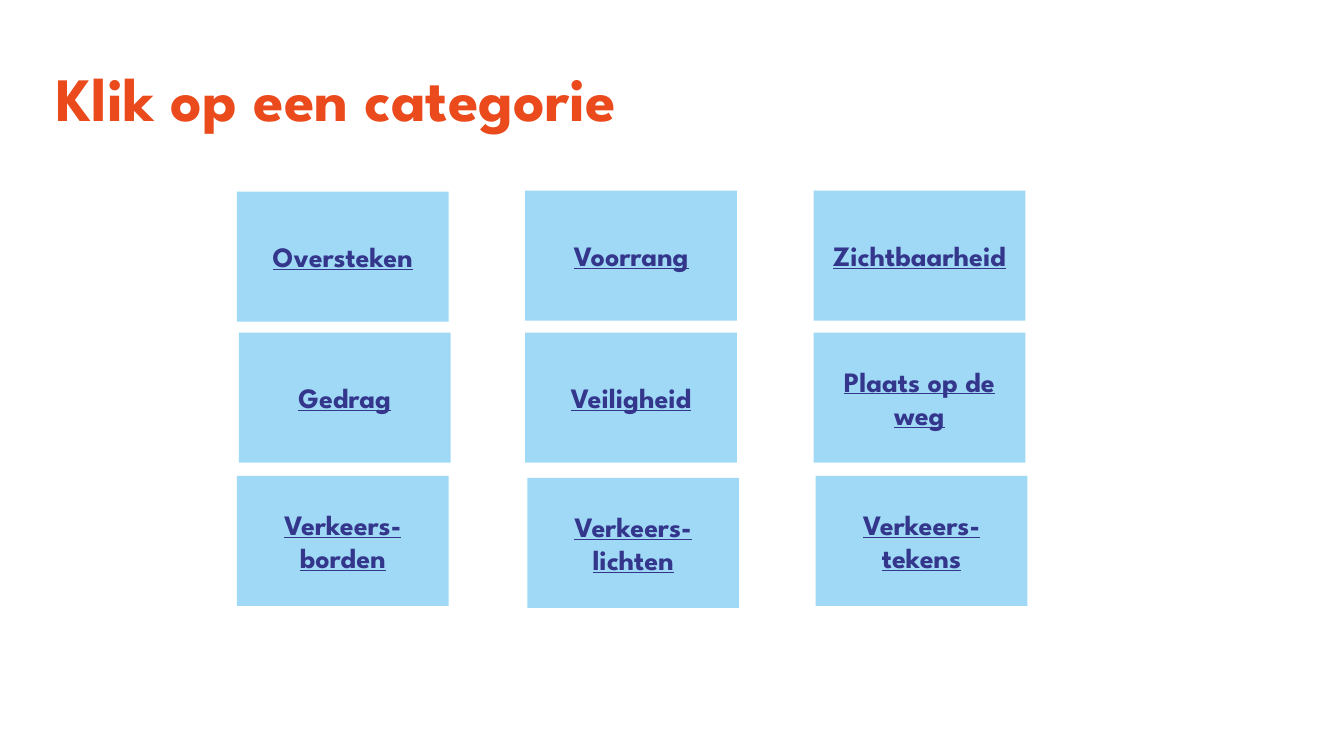
from dataclasses import dataclass

from pptx import Presentation
from pptx.dml.color import RGBColor
from pptx.enum.shapes import MSO_SHAPE as Shape
from pptx.enum.text import MSO_ANCHOR as Anchor, PP_ALIGN as Align
from pptx.util import Inches, Pt


@dataclass(frozen=True)
class Theme:
    font: str = "League Spartan"
    background: str = "FFFFFF"
    title_color: str = "EA4A1C"
    tile_fill: str = "9FD9F6"
    tile_text: str = "33368B"
    title_size: int = 44
    tile_size: int = 20


class CategorySlide:
    """Holds the theme and the current slide."""

    def __init__(self, slide, theme):
        self.slide = slide
        self.theme = theme
        fill = slide.background.fill
        fill.solid()
        fill.fore_color.rgb = RGBColor.from_string(theme.background)

    def set_text(self, shape, text, size, color, align, underline=False):
        frame = shape.text_frame
        frame.text = text
        frame.word_wrap = True
        frame.vertical_anchor = Anchor.MIDDLE
        paragraph = frame.paragraphs[0]
        paragraph.alignment = align
        font = paragraph.runs[0].font
        font.name = self.theme.font
        font.size = Pt(size)
        font.bold = True
        font.underline = underline
        font.color.rgb = RGBColor.from_string(color)
        return paragraph

    def title(self, text, left, top, width, height):
        box = self.slide.shapes.add_textbox(
            Inches(left), Inches(top), Inches(width), Inches(height))
        paragraph = self.set_text(box, text, self.theme.title_size,
                                  self.theme.title_color, Align.LEFT)
        paragraph.line_spacing = 0.9

    def tile(self, text, left, top, width, height):
        shape = self.slide.shapes.add_shape(
            Shape.RECTANGLE,
            Inches(left), Inches(top), Inches(width), Inches(height))
        shape.shadow.inherit = False
        shape.fill.solid()
        shape.fill.fore_color.rgb = RGBColor.from_string(self.theme.tile_fill)
        shape.line.fill.background()
        self.set_text(shape, text, self.theme.tile_size, self.theme.tile_text,
                      Align.CENTER, underline=True)


# Grid of categories: label, shift right, shift down
COLUMN_LEFT, COLUMN_STEP = 2.35, 2.86
ROW_TOPS = (1.89, 3.3, 4.72)
TILE_WIDTH, TILE_HEIGHT = 2.1, 1.29
CATEGORIES = (
    (("Oversteken", 0, 0.01), ("Voorrang", 0, 0), ("Zichtbaarheid", 0, 0)),
    (("Gedrag", 0.02, 0), ("Veiligheid", 0, 0), ("Plaats op de weg", 0, 0)),
    (("Verkeers-borden", 0, 0), ("Verkeers-lichten", 0.02, 0.02),
     ("Verkeers-tekens", 0.02, 0)),
)


def main():
    presentation = Presentation()
    presentation.slide_width = Inches(13.33)
    presentation.slide_height = Inches(7.5)
    blank_layout = presentation.slide_layouts[6]
    page = CategorySlide(presentation.slides.add_slide(blank_layout), Theme())

    # Title
    page.title("Klik op een categorie", 0.46, 0.28, 12.41, 1.45)

    # Category tiles
    for top, row in zip(ROW_TOPS, CATEGORIES):
        for column, (label, shift_right, shift_down) in enumerate(row):
            left = COLUMN_LEFT + column * COLUMN_STEP
            page.tile(label, left + shift_right, top + shift_down,
                      TILE_WIDTH, TILE_HEIGHT)

    presentation.save("out.pptx")


if __name__ == "__main__":
    main()
